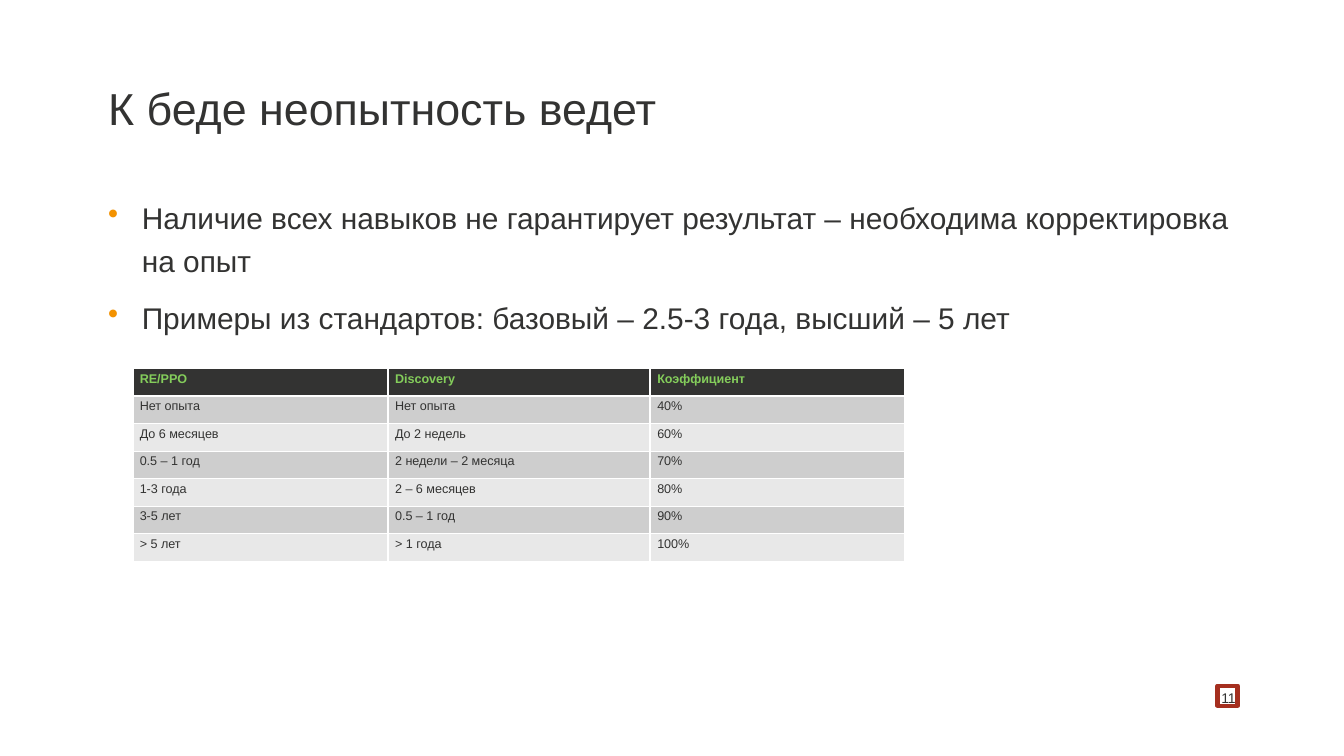
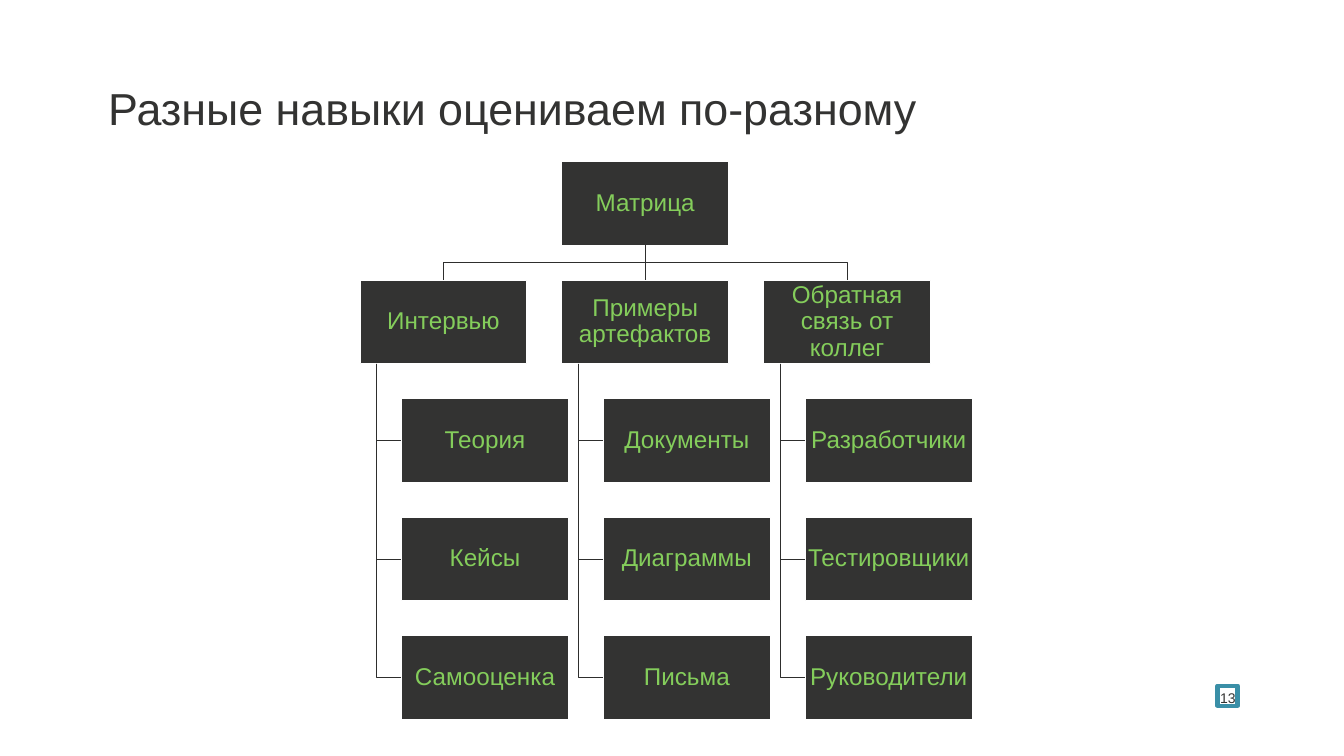
from lxml import etree
from pptx import Presentation
from pptx import util as u
from pptx.dml import color
from pptx.enum import shapes, text
from pptx.oxml import ns

Cm, Pt = u.Cm, u.Pt
DARK, GREEN, ORANGE, WHITE = "333332", "84CD5B", "F39200", "FFFFFF"
BANDS = ("CECECE", "E8E8E8")
MARGIN = 4.09


def rgb(value):
    return color.RGBColor.from_string(value)


def add_element(parent, tag, **attributes):
    return etree.SubElement(parent, ns.qn(tag), attributes)


class Deck:
    """Holds the shared style and the slide being filled."""
    font_name = "Arial"

    def __init__(self):
        self.presentation = Presentation()
        self.presentation.slide_width = Cm(50.8)
        self.presentation.slide_height = Cm(28.58)
        self.slide = None

    def new_slide(self, title, number, frame_color):
        self.slide = self.presentation.slides.add_slide(
            self.presentation.slide_layouts[6])
        self.text_box(title, MARGIN, 3.18, 32.92, 2.36, 48, spacing=0.96)
        # Page number with its coloured frame
        self.text_box(number, 43.05, 25.1, 3.66, 1.6, 15,
                      align=text.PP_ALIGN.RIGHT, anchor=text.MSO_ANCHOR.BOTTOM)
        frame = self.rectangle(46.02, 25.92, 0.76, 0.76, frame_color, 4.5)
        frame.fill.background()

    def style(self, paragraph, size, font_color=DARK, bold=False):
        font = paragraph.font
        font.name, font.size, font.bold = self.font_name, Pt(size), bold
        font.color.rgb = rgb(font_color)

    def set_frame(self, frame, inset, anchor):
        frame.word_wrap = True
        frame.vertical_anchor = anchor
        frame.margin_left = frame.margin_right = Cm(inset)
        frame.margin_top = frame.margin_bottom = Cm(inset)

    def text_box(self, content, left, top, width, height, size, spacing=1.0,
                 align=text.PP_ALIGN.LEFT, anchor=text.MSO_ANCHOR.TOP):
        frame = self.slide.shapes.add_textbox(
            Cm(left), Cm(top), Cm(width), Cm(height)).text_frame
        self.set_frame(frame, 0, anchor)
        frame.text = content
        for paragraph in frame.paragraphs:
            paragraph.alignment, paragraph.line_spacing = align, spacing
            self.style(paragraph, size)
        return frame

    def bullets(self, items, left, top, width, height):
        frame = self.text_box("\n".join(items), left, top, width, height, 32, 1.2)
        for index, paragraph in enumerate(frame.paragraphs):
            if index:
                paragraph.space_before = Pt(15)
            properties = paragraph._p.get_or_add_pPr()
            properties.set("marL", str(Cm(1.27)))
            properties.set("indent", str(-Cm(1.27)))
            bullet_color = etree.Element(ns.qn("a:buClr"))
            add_element(bullet_color, "a:srgbClr", val=ORANGE)
            bullet = etree.Element(ns.qn("a:buChar"), char="•")
            default_font = properties.find(ns.qn("a:defRPr"))
            default_font.addprevious(bullet_color)
            default_font.addprevious(bullet)

    def rectangle(self, left, top, width, height, line_color, line_width):
        shape = self.slide.shapes.add_shape(
            shapes.MSO_SHAPE.RECTANGLE, Cm(left), Cm(top), Cm(width), Cm(height))
        shape.shadow.inherit = False
        shape.line.color.rgb = rgb(line_color)
        shape.line.width = Pt(line_width)
        return shape

    def box(self, label, left, top, width, height):
        shape = self.rectangle(left, top, width, height, WHITE, 1)
        shape.fill.solid()
        shape.fill.fore_color.rgb = rgb(DARK)
        self.set_frame(shape.text_frame, 0.05, text.MSO_ANCHOR.MIDDLE)
        shape.text_frame.text = label
        paragraph = shape.text_frame.paragraphs[0]
        paragraph.alignment, paragraph.line_spacing = text.PP_ALIGN.CENTER, 0.9
        self.style(paragraph, 26, GREEN)

    def line(self, *points):
        """Straight connector for two points, open outline for more."""
        points = [(Cm(x), Cm(y)) for x, y in points]
        if len(points) == 2:
            shape = self.slide.shapes.add_connector(
                shapes.MSO_CONNECTOR.STRAIGHT, *points[0], *points[1])
            add_element(shape._element.spPr, "a:effectLst")
        else:
            builder = self.slide.shapes.build_freeform(*points[0])
            builder.add_line_segments(points[1:], close=False)
            shape = builder.convert_to_shape()
            shape.shadow.inherit = False
            shape.fill.background()
        shape.line.color.rgb = rgb("2E2E2D")
        shape.line.width = Pt(1)

    def table(self, rows, left, top, widths, row_height=1.04):
        table = self.slide.shapes.add_table(
            len(rows), len(widths), Cm(left), Cm(top),
            Cm(sum(widths)), Cm(row_height * len(rows))).table
        for column, width in zip(table.columns, widths):
            column.width = Cm(width)
        for row_index, row in enumerate(rows):
            header = row_index == 0
            for column_index, value in enumerate(row):
                cell = table.cell(row_index, column_index)
                self.borders(cell, 3 if header else 1)
                cell.fill.solid()
                cell.fill.fore_color.rgb = rgb(
                    DARK if header else BANDS[(row_index - 1) % 2])
                cell.text = value
                self.style(cell.text_frame.paragraphs[0], 13.5,
                           GREEN if header else DARK, header)

    def borders(self, cell, bottom_width):
        properties = cell._tc.get_or_add_tcPr()
        for side, width in zip("LRTB", (1, 1, 1, bottom_width)):
            border = add_element(properties, f"a:ln{side}", w=str(Pt(width)))
            fill = add_element(border, "a:solidFill")
            add_element(fill, "a:srgbClr", val=WHITE)


def experience_slide(deck):
    deck.new_slide("К беде неопытность ведет", "11", "A52F1F")
    deck.bullets(
        ["Наличие всех навыков не гарантирует результат – "
         "необходима корректировка на опыт",
         "Примеры из стандартов: базовый – 2.5-3 года, высший – 5 лет"],
        MARGIN, 7.26, 42.6, 17.8)
    # The Discovery table covers the empty middle column
    experience = ["RE/PPO", "Нет опыта", "До 6 месяцев", "0.5 – 1 год",
                  "1-3 года", "3-5 лет", "> 5 лет"]
    factors = ["Коэффициент", "40%", "60%", "70%", "80%", "90%", "100%"]
    discovery = ["Discovery", "Нет опыта", "До 2 недель", "2 недели – 2 месяца",
                 "2 – 6 месяцев", "0.5 – 1 год", "> 1 года"]
    deck.table([(term, "", factor) for term, factor in zip(experience, factors)],
               5.03, 13.94, (9.6, 9.96, 9.6))
    deck.table([(term,) for term in discovery], 14.68, 13.94, (9.86,))


def methods_slide(deck):
    deck.new_slide("Разные навыки оцениваем по-разному", "13", "3A8FA7")
    branches = {
        "Интервью": ["Теория", "Кейсы", "Самооценка"],
        "Примеры артефактов": ["Документы", "Диаграммы", "Письма"],
        "Обратная связь от коллег": ["Разработчики", "Тестировщики",
                                     "Руководители"],
    }
    width, height = 6.3, 3.15
    left, top = 13.61, 6.12
    column_step, row_step = 7.63, 4.48
    root_left = left + column_step
    root_x, root_bottom = root_left + width / 2, top + height
    branch_top = top + row_step
    middle_y = (root_bottom + branch_top) / 2

    deck.box("Матрица", root_left, top, width, height)
    for column, (branch, leaves) in enumerate(branches.items()):
        branch_left = left + column * column_step
        branch_x = branch_left + width / 2
        # Link from the root to the branch
        if column == 1:
            deck.line((root_x, root_bottom), (root_x, branch_top))
        else:
            deck.line((root_x, root_bottom), (root_x, middle_y),
                      (branch_x, middle_y), (branch_x, branch_top))
        deck.box(branch, branch_left, branch_top, width, height)
        # Leaves hang from a trunk near the branch's left edge
        trunk_x, leaf_left = branch_left + width / 10, branch_left + width / 4
        for row, leaf in enumerate(leaves, start=1):
            leaf_top = branch_top + row * row_step
            leaf_y = leaf_top + height / 2
            deck.line((trunk_x, branch_top + height), (trunk_x, leaf_y),
                      (leaf_left, leaf_y))
            deck.box(leaf, leaf_left, leaf_top, width, height)


def main():
    deck = Deck()
    experience_slide(deck)
    methods_slide(deck)
    deck.presentation.save("out.pptx")


if __name__ == "__main__":
    main()
